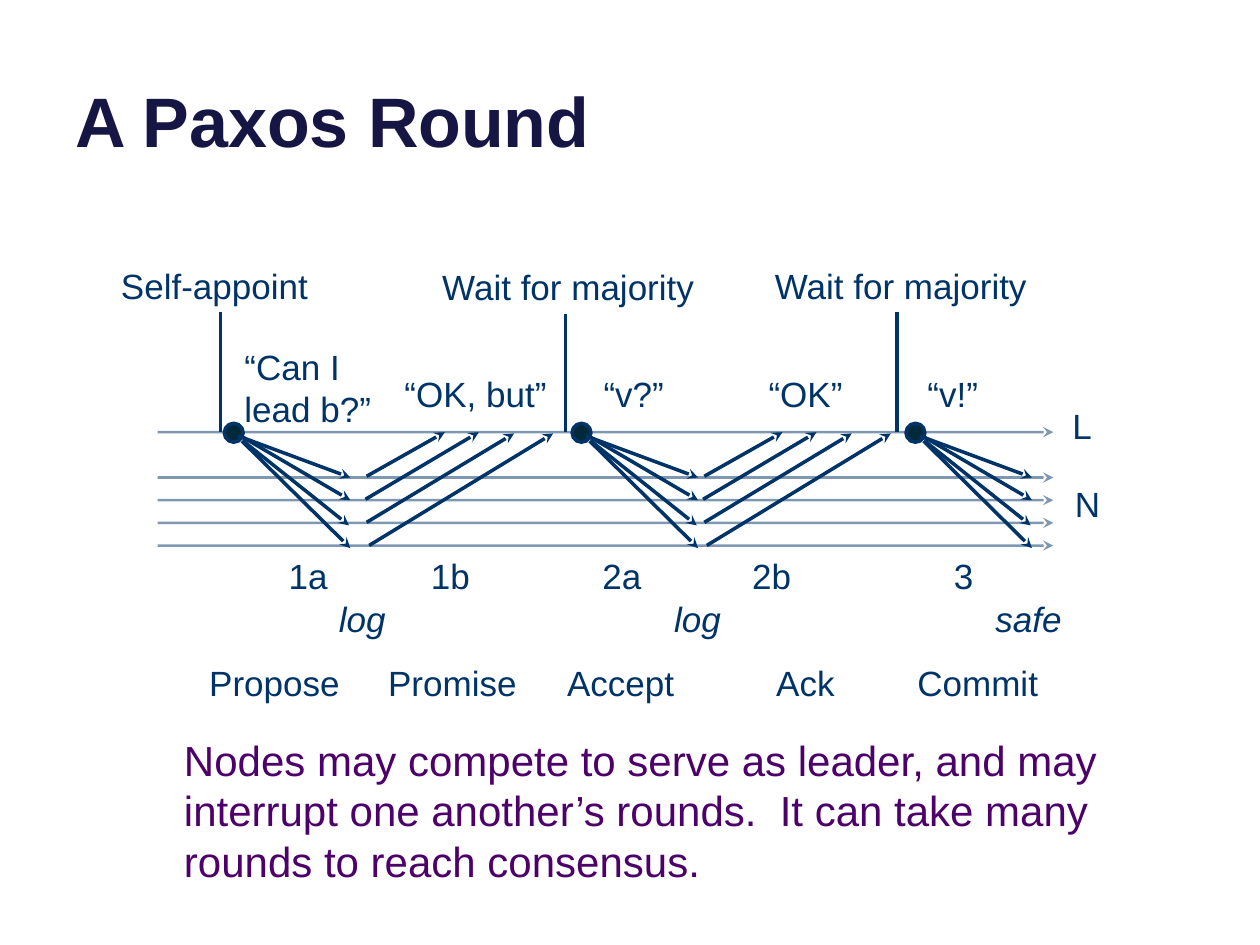
from lxml import etree
from pptx import Presentation
from pptx.dml.color import RGBColor
from pptx.enum.shapes import MSO_CONNECTOR, MSO_SHAPE
from pptx.enum.text import MSO_ANCHOR
from pptx.oxml.ns import qn
from pptx.util import Inches, Pt

STRAIGHT = MSO_CONNECTOR.STRAIGHT
OVAL = MSO_SHAPE.OVAL
TOP, BOTTOM = MSO_ANCHOR.TOP, MSO_ANCHOR.BOTTOM

NAVY = RGBColor(0x00, 0x33, 0x67)
DARK = RGBColor(0x00, 0x29, 0x39)
INK = RGBColor(0x16, 0x16, 0x45)
PLUM = RGBColor(0x4D, 0x00, 0x69)
FONT = "Arial"

# The slide is a grid of 100 columns by 75 rows
COLS, ROWS = 100, 75
CELL = Inches(0.1)
LEAD = 34.3       # row of the leader's time line
NODE = 37.9       # row of the first node's time line
GAP = 1.8         # rows between node time lines
TEXT_H = 4.2      # rows of a one-line label


def grid(*nums):
    return [round(n * CELL) for n in nums]


def write(slide, box, text, size=20, color=NAVY, bold=False, italic=False,
          insets=(0.4, 0, 0.4, 0), anchor=TOP):
    frame = slide.shapes.add_textbox(*grid(*box)).text_frame
    frame.word_wrap = True
    frame.vertical_anchor = anchor
    (frame.margin_left, frame.margin_top,
     frame.margin_right, frame.margin_bottom) = grid(*insets)
    run = frame.paragraphs[0].add_run()
    run.text = text
    font = run.font
    font.name, font.size = FONT, Pt(size)
    font.bold, font.italic = bold, italic
    font.color.rgb = color


def stroke(shapes, start, end, width=2, head=True, alpha=None):
    """Draw a line; an arrowhead sits at its start."""
    line = shapes.add_connector(STRAIGHT, *grid(*start, *end))
    line.line.color.rgb = NAVY
    line.line.width = Pt(width)
    props = line.line._get_or_add_ln()
    if alpha:
        tone = props.find(".//" + qn("a:srgbClr"))
        etree.SubElement(tone, qn("a:alpha"), val=str(alpha * 1000))
    if head:
        etree.SubElement(props, qn("a:headEnd"), type="stealth")
    etree.SubElement(line._element.spPr, qn("a:effectLst"))


def rails(slide, left, top, wide):
    """Time lines of the four nodes and of the leader."""
    rows = [NODE + i * GAP for i in reversed(range(4))] + [top]
    for row in rows:
        stroke(slide.shapes, (left + wide, row), (left, row), 1.5, alpha=50)


def fan(slide, left, top):
    """Leader's dot with a message to each node."""
    parts = slide.shapes.add_group_shape().shapes
    dot = parts.add_shape(OVAL, *grid(left, top, 1.5, 1.5))
    dot.shadow.inherit = False
    dot.fill.solid()
    dot.fill.fore_color.rgb = DARK
    dot.line.color.rgb = NAVY
    dot.line.width = Pt(2)
    for tip, root in (((10, 4.3), (1.1, 1)), ((10, 6.1), (1.3, 1)),
                      ((9.9, 8.1), (1.5, 1.4)), ((10, 9.9), (1.4, 1.4))):
        stroke(parts, (left + tip[0], top + tip[1]),
               (left + root[0], top + root[1]))


def replies(slide, left, top):
    """Answer from each node back to the leader."""
    parts = slide.shapes.add_group_shape().shapes
    for i, (tip, root) in enumerate(((6.3, 0.1), (9, 0),
                                     (11.8, 0.1), (14.9, 0.3))):
        stroke(parts, (left + tip, top + i // 2 * 0.1),
               (left + root, top + 3.5 + i * 1.83))


def event(slide, left, top, wide, text, stem):
    """Caption with a stem down to the leader's time line."""
    write(slide, (left, top, wide, TEXT_H), text)
    stroke(slide.shapes, (stem, top + 3.8), (stem, LEAD), head=False)


def labels(slide, top, items, italic=False):
    """One row of labels, each at its own column."""
    for left, wide, text in items:
        write(slide, (left, top, wide, TEXT_H), text, italic=italic)


def build():
    deck = Presentation()
    deck.slide_width, deck.slide_height = grid(COLS, ROWS)
    slide = deck.slides.add_slide(deck.slide_layouts[6])

    # Title
    write(slide, (5, -3.7, 90, 17), "A Paxos Round", 40, INK, bold=True,
          insets=(1, 0.5, 1.4, 0.5), anchor=BOTTOM)

    # Time lines and messages
    rails(slide, 12.5, LEAD, 71.1)
    for left in (17.8, 45.4, 71.9):
        fan(slide, left, 33.6)
    for left in (29, 55.8):
        replies(slide, left, LEAD)

    # What the leader does
    event(slide, 9.2, 21, 16.5, "Self-appoint", 17.5)
    event(slide, 34.7, 21.1, 21.7, "Wait for majority", 44.9)
    event(slide, 61.1, 21, 21.7, "Wait for majority", 71.2)

    # What is said
    write(slide, (19, 27.4, 13.8, 7.4), "“Can I lead b?”")
    labels(slide, 29.6, ((31.7, 13, "“OK, but”"), (47.5, 6.5, "“v?”"),
                         (60.6, 7.6, "“OK”"), (73.2, 5.7, "“v!”")))

    # Names of the time lines
    labels(slide, 32.1, ((84.7, 3.2, "L"),))
    labels(slide, 38.3, ((84.9, 3.7, "N"),))

    # Phases, stable points and steps
    labels(slide, 44, ((22.5, 4.8, "1a"), (33.8, 4.8, "1b"),
                       (47.4, 4.8, "2a"), (59.3, 4.8, "2b"),
                       (75.3, 3.2, "3")))
    labels(slide, 47.4, ((26.5, 5.4, "log"), (53.1, 5.4, "log"),
                         (78.6, 6.9, "safe")), italic=True)
    labels(slide, 52.5, ((16.2, 12, "Propose"), (30.4, 11.9, "Promise"),
                         (44.6, 10.2, "Accept"), (61.2, 6.3, "Ack"),
                         (72.4, 11.2, "Commit")))

    # Closing note
    write(slide, (14.2, 58.3, 74.2, 12.1),
          "Nodes may compete to serve as leader, and may interrupt one "
          "another’s rounds.  It can take many rounds to reach consensus.",
          24, PLUM)

    deck.save("out.pptx")


if __name__ == "__main__":
    build()
